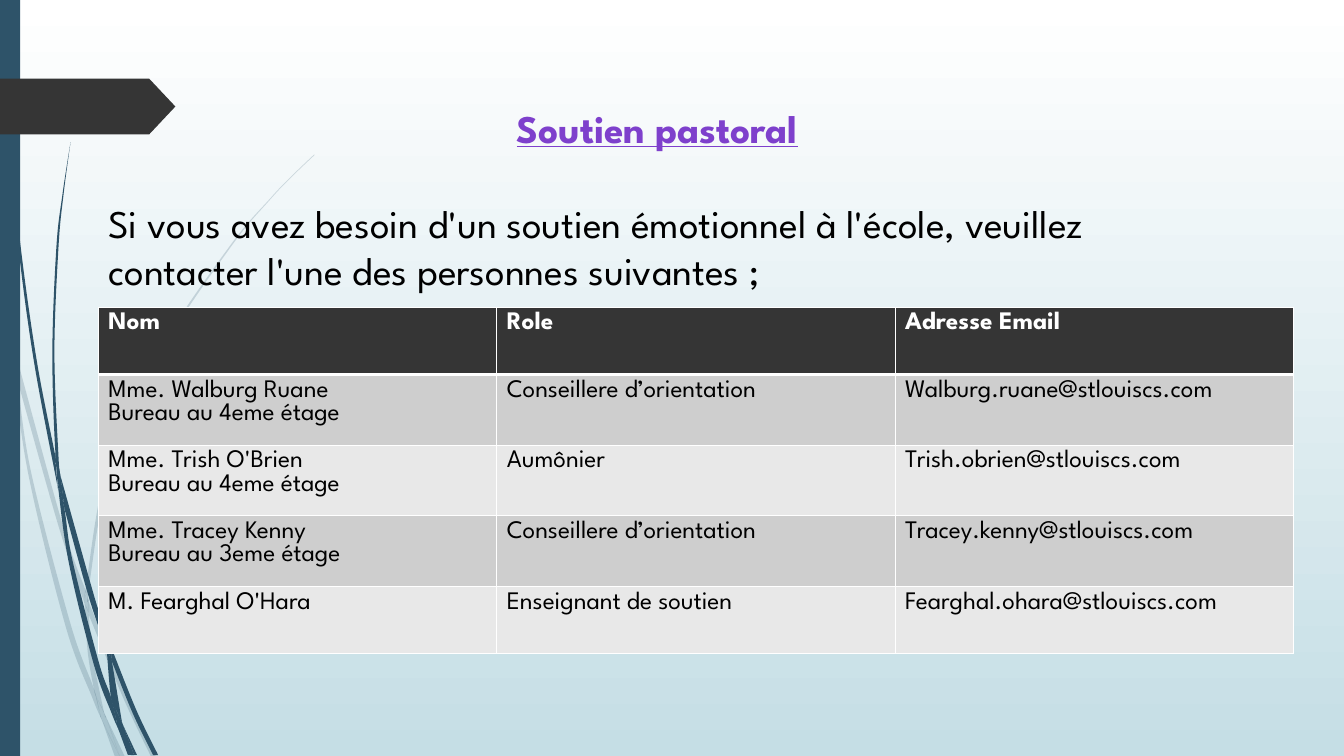
from dataclasses import dataclass

from lxml.etree import SubElement
from pptx import Presentation
from pptx.dml.color import RGBColor
from pptx.enum.shapes import MSO_SHAPE
from pptx.enum.text import MSO_ANCHOR, MSO_AUTO_SIZE, PP_ALIGN
from pptx.oxml.ns import qn
from pptx.util import Pt

FONT = "League Spartan"
WHITE = RGBColor(0xFF, 0xFF, 0xFF)
BLACK = RGBColor(0x00, 0x00, 0x00)
PALE_BLUE = RGBColor(0xC5, 0xDE, 0xE5)
BLUE = RGBColor(0x2E, 0x53, 0x69)
CHARCOAL = RGBColor(0x35, 0x35, 0x35)
PURPLE = RGBColor(0x7E, 0x40, 0xCC)
BAND_DARK = RGBColor(0xCE, 0xCE, 0xCE)
BAND_LIGHT = RGBColor(0xE8, 0xE8, 0xE8)
UNITS_PER_POINT = 100
Edge = list[tuple[float, float]]


@dataclass
class Blade:
    """A piece of grass, bounded by one edge and by the edge leading back."""
    out: Edge
    back: Edge


@dataclass
class Contact:
    name: str
    role: str
    email: str


PALE_BLADES = [
    Blade([(7.9, 252), (6.5, 231.8), (0, 203)], [(0, 215.3), (7.2, 247.7), (7.9, 252)]),
    Blade([(10.1, 248.4), (44.6, 374.4), (61.2, 421.9)], [(60.5, 431.3), (41.8, 375.8), (12.2, 270.7)]),
    Blade([(63.4, 429.1), (66.2, 437), (91.4, 498.2), (111.6, 540.7)],
          [(108, 540.7), (88.6, 499.7), (63.4, 439.2)]),
    Blade([(75.6, 511.9), (89.3, 540.7)], [(85.7, 540.7), (75.6, 511.9)]),
    Blade([(7.9, 252), (12.2, 270.7), (22.3, 337.7), (50.4, 445.7), (67, 491.8), (71.3, 509), (72.7, 514.1)],
          [(72.7, 514.1), (66.2, 499), (46.8, 447.1), (20.2, 338.4), (7.9, 252)]),
    Blade([(60.5, 431.3), (63.4, 439.2), (65.5, 465.1), (74.2, 508.3), (75.6, 511.9)],
          [(75.6, 511.9), (69.1, 498.2), (67, 491.8), (62.6, 465.1), (60.5, 431.3)]),
    Blade([(63.4, 429.1), (63.4, 420.5), (79.2, 332.6), (115.2, 251.3), (164.9, 176.4), (193, 142.6),
           (208.8, 126), (224.6, 110.9)],
          [(224.6, 110.2), (208.1, 126), (193, 141.8), (164.2, 175.7), (113.8, 250.6), (77, 331.9),
           (61.2, 420.5), (61.2, 421.9)]),
    Blade([(72.7, 514.1), (82.1, 540.7)], [(85.7, 540.7), (72.7, 514.1)]),
    Blade([(61.2, 421.9), (63.4, 429.1), (63.4, 439.2)], [(63.4, 437.8), (60.5, 431.3)]),
    Blade([(67, 491.8), (69.1, 498.2), (75.6, 511.9), (85.7, 540.7)],
          [(85.7, 540.7), (72.7, 514.1), (71.3, 509), (67, 491.8)]),
]
DEEP_BLADES = [
    Blade([(2.2, 0), (2.9, 34.6), (5, 79.2), (12.2, 167.8), (23.8, 255.6), (40.3, 343.4), (41, 346.3)],
          [(39.6, 329), (39.6, 326.2), (25.9, 255.6), (13.7, 167), (5.8, 78.5), (3.6, 34.6), (2.9, 0)]),
    Blade([(43.2, 339.8), (67, 424.8), (76.3, 454.3), (76.3, 464.4)],
          [(76.3, 464.4), (63.4, 426.2), (46.1, 363.6)]),
    Blade([(79.2, 461.5), (81.4, 467.3), (97.9, 508.3), (113, 539.3)],
          [(109.4, 539.3), (95, 509.8), (79.9, 472.3)]),
    Blade([(41, 343.4), (46.1, 363.6), (51.8, 400.3), (70.6, 473), (79.2, 497.5), (83.5, 516.2), (84.2, 519.8)],
          [(84.2, 519.8), (79.9, 509.8), (67, 474.5), (49, 401), (41, 343.4)]),
    Blade([(43.2, 339.8), (41.8, 326.2), (38.9, 251.3), (41.8, 176.4), (45.4, 139), (50.4, 101.5)],
          [(50.4, 101.5), (44.6, 139), (40.3, 176.4), (37.4, 251.3), (39.6, 323.3), (43.2, 339.8)]),
    Blade([(87.8, 517.7), (97.9, 539.3)], [(95.8, 539.3), (87.8, 517.7)]),
    Blade([(39.6, 323.3), (43.2, 339.8), (46.1, 363.6)], [(41, 343.4), (39.6, 326.2)]),
    Blade([(79.2, 461.5), (79.9, 455.8), (90, 397.4), (113.8, 342.7), (147.6, 292.3), (166.3, 269.3),
           (176.4, 258.5), (187.9, 247.7)],
          [(187.2, 247.7), (176.4, 257.8), (166.3, 268.6), (146.9, 291.6), (112.3, 341.3), (87.8, 396.7),
           (76.3, 454.3)]),
    Blade([(84.2, 519.8), (91.4, 539.3)], [(94.3, 539.3), (84.2, 519.8)]),
    Blade([(76.3, 464.4), (78.5, 468.7), (79.9, 472.3), (87.1, 515.5), (87.8, 517.7)],
          [(87.8, 517.7), (83.5, 508.3), (79.2, 497.5), (76.3, 464.4)]),
    Blade([(76.3, 454.3), (79.2, 461.5), (79.9, 472.3)], [(78.5, 468.7), (76.3, 464.4)]),
    Blade([(79.2, 497.5), (83.5, 508.3), (87.8, 517.7), (95.8, 539.3)],
          [(93.6, 539.3), (84.2, 519.8), (83.5, 516.2), (79.2, 497.5)]),
]
HEADINGS = Contact("Nom", "Role", "Adresse Email")
CONTACTS = [
    Contact("Mme. Walburg Ruane\nBureau au 4eme étage", "Conseillere d’orientation",
            "Walburg.ruane@stlouiscs.com"),
    Contact("Mme. Trish O'Brien\nBureau au 4eme étage", "Aumônier", "Trish.obrien@stlouiscs.com"),
    Contact("Mme. Tracey Kenny\nBureau au 3eme étage", "Conseillere d’orientation",
            "Tracey.kenny@stlouiscs.com"),
    Contact("M. Fearghal O'Hara", "Enseignant de soutien", "Fearghal.ohara@stlouiscs.com"),
]


def apply(target, formats: dict) -> None:
    for attribute, value in formats.items():
        setattr(target, attribute, value)


def format_font(font, colour: RGBColor, **formats) -> None:
    apply(font, {"name": FONT, **formats})
    font.color.rgb = colour


def paint(shape, colour: RGBColor) -> None:
    shape.shadow.inherit = False
    shape.fill.solid()
    shape.fill.fore_color.rgb = colour
    shape.line.fill.background()


def bend(segments: list, corners: Edge) -> None:
    """Turn the straight segments of one edge into a smooth run of Bézier curves."""
    padded = [corners[0], *corners, corners[-1]]
    for segment, a, b, c, d in zip(segments, padded, padded[1:], padded[2:], padded[3:]):
        segment.tag = qn("a:cubicBezTo")
        handles = ([q + (r - p) / 6 for p, q, r in zip(a, b, c)],
                   [r - (s - q) / 6 for q, r, s in zip(b, c, d)])
        for index, (x, y) in enumerate(handles):
            handle = SubElement(segment, qn("a:pt"), x=str(round(x)), y=str(round(y)))
            segment.insert(index, handle)


def draw_blade(shapes, blade: Blade, opacity: int) -> None:
    outline = [(x * UNITS_PER_POINT, y * UNITS_PER_POINT) for x, y in blade.out + blade.back]
    builder = shapes.build_freeform(*outline[0], scale=Pt(1) / UNITS_PER_POINT)
    builder.add_line_segments(outline[1:], close=True)
    grass = builder.convert_to_shape()
    paint(grass, BLUE)
    corners = [(int(point.get("x")), int(point.get("y"))) for point in grass.element.iter(qn("a:pt"))]
    segments = list(grass.element.iter(qn("a:lnTo")))
    turn = len(blade.out)
    bend(segments[:turn - 1], corners[:turn])
    bend(segments[turn:len(outline) - 1], corners[turn:len(outline)])
    if opacity < 100:
        colour = grass.element.spPr.find(qn("a:solidFill"))[0]
        SubElement(colour, qn("a:alpha"), val=str(opacity * 1000))


def fill_placeholder(shapes, holder, text: str, top: float, height: float,
                     align: PP_ALIGN, colour: RGBColor, **formats) -> None:
    """Place and format a placeholder and bring it in front of the decoration."""
    apply(holder, {"left": Pt(70.2), "top": Pt(top), "width": Pt(798.5), "height": Pt(height)})
    frame = holder.text_frame
    frame.text = text
    apply(frame, {"word_wrap": True, "auto_size": MSO_AUTO_SIZE.NONE, "vertical_anchor": MSO_ANCHOR.TOP})
    paragraph = frame.paragraphs[0]
    apply(paragraph, {"alignment": align, "line_spacing": 1.0, "space_before": Pt(0)})
    properties = paragraph._p.get_or_add_pPr()
    properties.set("marL", "0")
    properties.set("indent", "0")
    SubElement(properties, qn("a:buNone"))
    format_font(paragraph.font, colour, size=Pt(28), **formats)
    shapes.element.append(holder.element)


def draw_border(cell, side: str, width: float) -> None:
    line = SubElement(cell._tc.get_or_add_tcPr(), qn(f"a:ln{side}"), w=str(Pt(width)))
    SubElement(SubElement(line, qn("a:solidFill")), qn("a:srgbClr"), val=str(WHITE))


def add_contact_table(shapes) -> None:
    rows = [HEADINGS, *CONTACTS]
    table = shapes.add_table(len(rows), 3, Pt(70.2), Pt(219.4), Pt(853.8), Pt(247.6)).table
    for column in table.columns:
        column.width = Pt(284.6)
    for index, contact in enumerate(rows):
        is_header = index == 0
        table.rows[index].height = Pt(50.4 if "\n" in contact.name else 48.2)
        band = CHARCOAL if is_header else BAND_DARK if index % 2 else BAND_LIGHT
        borders = {"L": 1, "R": 1, "T": 3 if index == 1 else 1, "B": 3 if is_header else 1}
        for column, text in enumerate((contact.name, contact.role, contact.email)):
            cell = table.cell(index, column)
            cell.text = text
            for side, width in borders.items():
                draw_border(cell, side, width)
            cell.fill.solid()
            cell.fill.fore_color.rgb = band
            for paragraph in cell.text_frame.paragraphs:
                format_font(paragraph.font, WHITE if is_header else BLACK, size=Pt(18), bold=is_header)


def main() -> None:
    deck = Presentation()
    apply(deck, {"slide_width": Pt(960), "slide_height": Pt(540)})
    slide = deck.slides.add_slide(deck.slide_layouts[1])
    shapes = slide.shapes
    backdrop = slide.background.fill
    backdrop.gradient()
    backdrop.gradient_angle = 270
    for stop, colour, position in zip(backdrop.gradient_stops, (WHITE, PALE_BLUE), (0, 1)):
        stop.color.rgb = colour
        stop.position = position
    for blades, opacity in ((PALE_BLADES, 20), (DEEP_BLADES, 100)):
        for blade in blades:
            draw_blade(shapes, blade, opacity)
    paint(shapes.add_shape(MSO_SHAPE.RECTANGLE, 0, 0, Pt(14.4), Pt(540)), BLUE)
    marker = shapes.add_shape(MSO_SHAPE.PENTAGON, 0, Pt(56.2), Pt(125.3), Pt(39.8))
    marker.adjustments[0] = 0.47
    paint(marker, CHARCOAL)
    fill_placeholder(shapes, shapes.title, "Soutien pastoral", 71, 60,
                     PP_ALIGN.CENTER, PURPLE, bold=True, underline=True)
    fill_placeholder(shapes, slide.placeholders[1],
                     "Si vous avez besoin d'un soutien émotionnel à l'école, veuillez "
                     "contacter l'une des personnes suivantes ;",
                     138.5, 80, PP_ALIGN.LEFT, BLACK, bold=False)
    add_contact_table(shapes)
    deck.save("out.pptx")


if __name__ == "__main__":
    main()
